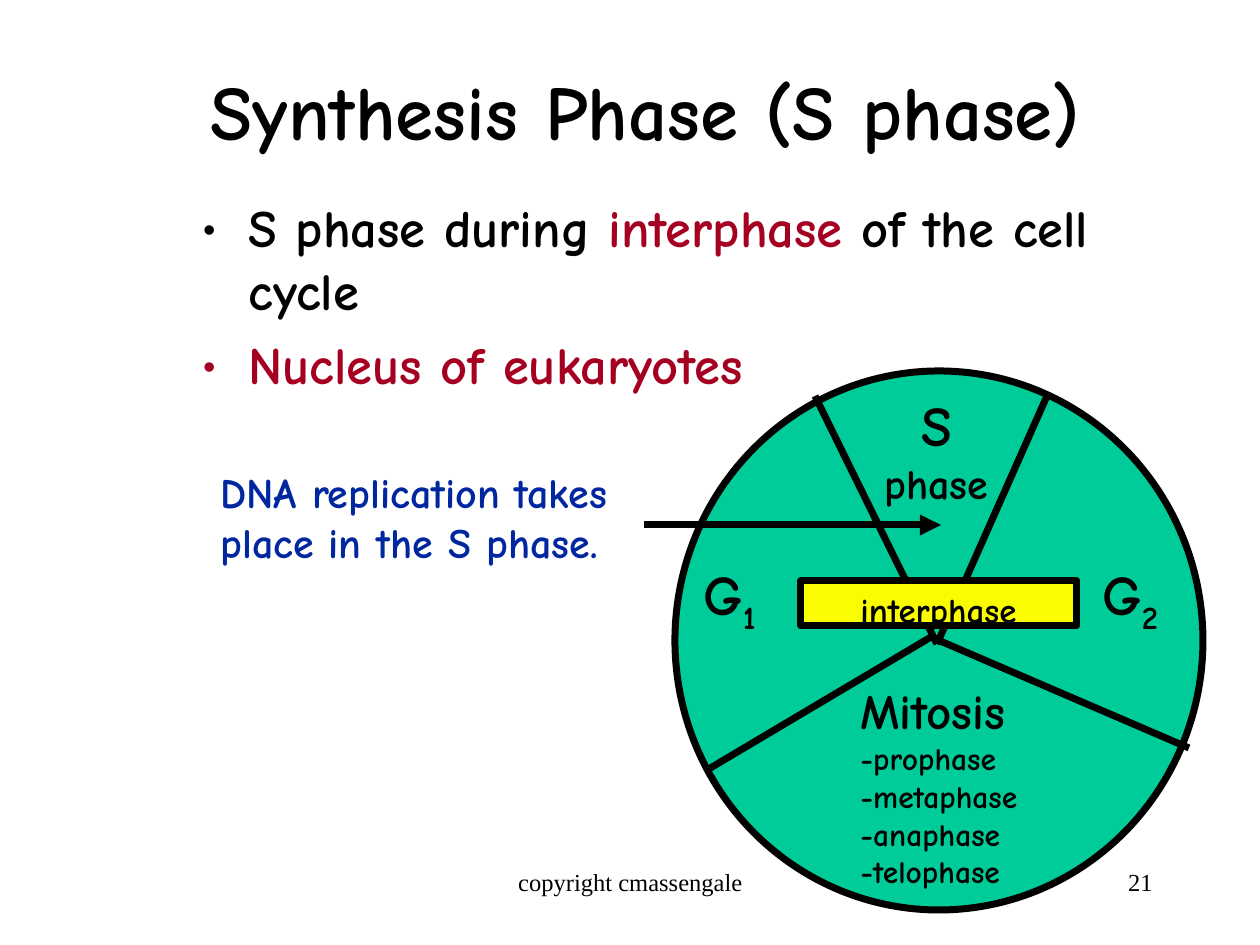
import pptx
import pptx.util
import pptx.dml.color
import pptx.enum.shapes
import pptx.enum.text
import pptx.oxml.ns
from lxml import etree

SCALE = 914400 / 126
COMIC = "Comic Neue"
TIMES = "Times New Roman"
BLACK, RED, BLUE = "000000", "A50021", "00279F"
GREEN, YELLOW = "00CC99", "FAFD00"
ALIGN = pptx.enum.text.PP_ALIGN
SHAPES = pptx.enum.shapes.MSO_SHAPE
LINE_POINTS = 4


def px(length):
    """Turn pixels into EMU."""
    return pptx.util.Emu(round(length * SCALE))


def color(value):
    """Turn a hex string into a colour."""
    return pptx.dml.color.RGBColor.from_string(value)


def add_element(parent, tag, **attributes):
    """Append a DrawingML element to a parent element."""
    return etree.SubElement(parent, pptx.oxml.ns.qn(tag), attributes)


def add_run(paragraph, text, size, fill=BLACK, font=COMIC, subscript=False):
    """Add one formatted run; the comic face is always bold."""
    run = paragraph.add_run()
    run.text = text
    run.font.name = font
    run.font.size = pptx.util.Pt(size)
    run.font.bold = font == COMIC
    run.font.color.rgb = color(fill)
    if subscript:
        run.font._element.set("baseline", "-25000")


def add_text(slide, box, paragraphs, align=ALIGN.LEFT, wrap=False, middle=False):
    """Add a text box whose paragraphs are lists of run arguments."""
    shape = slide.shapes.add_textbox(*map(px, box))
    frame = shape.text_frame
    frame.word_wrap = wrap
    if middle:
        frame.vertical_anchor = pptx.enum.text.MSO_ANCHOR.MIDDLE
    for index, runs in enumerate(paragraphs):
        paragraph = frame.add_paragraph() if index else frame.paragraphs[0]
        paragraph.alignment = align
        for run in runs:
            add_run(paragraph, *run)
    return frame


def add_bullets(slide, box, paragraphs):
    """Add a bulleted list with hanging indents."""
    frame = add_text(slide, box, paragraphs, wrap=True)
    for index, paragraph in enumerate(frame.paragraphs):
        if index:
            paragraph.space_before = pptx.util.Pt(6)
        properties = paragraph._p.get_or_add_pPr()
        properties.set("marL", str(px(47)))
        properties.set("indent", str(px(-47)))
        add_element(properties, "a:buFont", typeface=COMIC)
        add_element(properties, "a:buChar", char="•")


def add_outlined(slide, kind, box, fill):
    """Add a filled preset shape with a black outline."""
    shape = slide.shapes.add_shape(kind, *map(px, box))
    shape.shadow.inherit = False
    shape.fill.solid()
    shape.fill.fore_color.rgb = color(fill)
    shape.line.color.rgb = color(BLACK)
    shape.line.width = pptx.util.Pt(LINE_POINTS)


def add_line(slide, start, end, arrow=False):
    """Add a straight black line, with an arrowhead at its end if asked."""
    line = slide.shapes.add_connector(
        pptx.enum.shapes.MSO_CONNECTOR.STRAIGHT, *map(px, start + end))
    line.line.color.rgb = color(BLACK)
    line.line.width = pptx.util.Pt(LINE_POINTS)
    if arrow:
        add_element(line.line._get_or_add_ln(), "a:tailEnd", type="triangle")
    add_element(line._element.spPr, "a:effectLst")


def add_cycle(slide):
    """Draw the cell cycle circle with its sectors and labels."""
    add_outlined(slide, SHAPES.OVAL, (675, 371, 528, 539), GREEN)
    for start, end in (((707, 770), (931, 637)), ((1189, 748), (931, 637)),
                       ((937, 644), (815, 396)), ((937, 644), (1047, 396))):
        add_line(slide, start, end)
    stages = ("prophase", "metaphase", "anaphase", "telophase")
    add_text(slide, (848, 674, 204, 223),
             [[("Mitosis", 28)]] + [[("-" + stage, 18)] for stage in stages])
    for left, number in ((691, "1"), (1090, "2")):
        add_text(slide, (left, 553, 86, 79),
                 [[("G", 32), (number, 32, BLACK, COMIC, True)]])
    add_text(slide, (867, 384, 139, 130), [[("S", 32)], [("phase", 24)]], ALIGN.CENTER)
    add_outlined(slide, SHAPES.RECTANGLE, (801, 581, 276, 45), YELLOW)
    add_text(slide, (848, 582, 200, 54), [[("interphase", 20)]])


def main():
    """Build the slide and save it."""
    presentation = pptx.Presentation()
    presentation.slide_width, presentation.slide_height = px(1260), px(945)
    slide = presentation.slides.add_slide(presentation.slide_layouts[6])
    add_text(slide, (126, 42, 1040, 136), [[("Synthesis Phase (S phase)", 44)]],
             ALIGN.CENTER, wrap=True, middle=True)
    add_bullets(slide, (189, 189, 977, 651), [
        [("S phase during ", 30), ("interphase", 30, RED), (" of the cell cycle", 30)],
        [("Nucleus of eukaryotes", 30, RED)]])
    add_cycle(slide)
    add_text(slide, (208, 460, 476, 113),
             [[("DNA replication takes", 24, BLUE)], [("place in the S phase.", 24, BLUE)]])
    add_line(slide, (644, 525), (941, 525), arrow=True)
    add_text(slide, (431, 861, 399, 63),
             [[("copyright cmassengale", 14, BLACK, TIMES)]], ALIGN.CENTER, wrap=True)
    add_text(slide, (903, 861, 262, 63),
             [[("21", 14, BLACK, TIMES)]], ALIGN.RIGHT, wrap=True)
    presentation.save("out.pptx")


if __name__ == "__main__":
    main()
